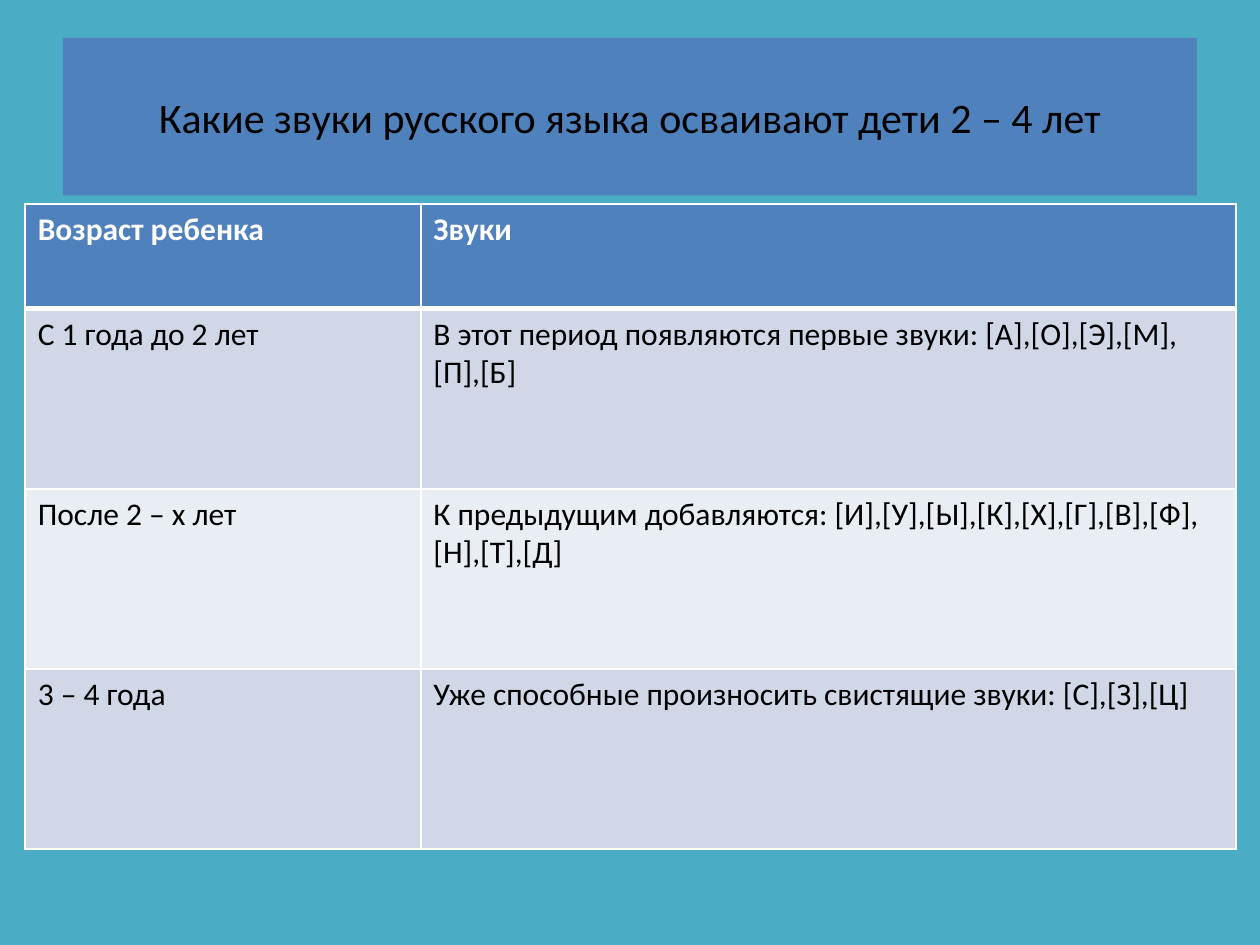
"""Build a slide with a table of the sounds children master by age."""
from lxml import etree
from pptx import Presentation
from pptx import util as u
from pptx.dml.color import RGBColor
from pptx.enum import shapes, text
from pptx.oxml.ns import qn

COLOURS = {
    "background": "4BACC6",
    "header": "4F81BD",
    "odd": "D0D8E8",
    "even": "E9EDF4",
    "border": "FFFFFF",
    "header_text": "FFFFFF",
    "text": "000000",
}
ROWS = [
    ("Возраст ребенка", "Звуки"),
    ("С 1 года до 2 лет", "В этот период появляются первые звуки: [А],[О],[Э],[М],[П],[Б]"),
    ("После 2 – х лет", "К предыдущим добавляются: [И],[У],[Ы],[К],[Х],[Г],[В],[Ф],[Н],[Т],[Д]"),
    ("3 – 4 года", "Уже способные произносить свистящие звуки: [C],[З],[Ц]"),
]
COLUMN_WIDTHS = [3.14, 6.47]
ROW_HEIGHTS = [0.83, 1.43, 1.43, 1.43]


def write(frame, words, size, colour, bold=False):
    frame.text = words
    font = frame.paragraphs[0].runs[0].font
    font.name = "Calibri"
    font.size = u.Pt(size)
    font.bold = bold
    font.color.rgb = RGBColor.from_string(COLOURS[colour])


def add_border(cell, side, points):
    line = etree.SubElement(cell._tc.get_or_add_tcPr(), qn(f"a:ln{side}"), w=str(u.Pt(points)))
    fill = etree.SubElement(line, qn("a:solidFill"))
    etree.SubElement(fill, qn("a:srgbClr"), val=COLOURS["border"])


deck = Presentation()
deck.slide_width, deck.slide_height = u.Inches(10), u.Inches(7.5)
page = deck.slides.add_slide(deck.slide_layouts[6])
page.background.fill.solid()
page.background.fill.fore_color.rgb = RGBColor.from_string(COLOURS["background"])

title = page.shapes.add_shape(
    shapes.MSO_SHAPE.RECTANGLE, u.Inches(0.5), u.Inches(0.3), u.Inches(9), u.Inches(1.25)
)
title.shadow.inherit = False
title.fill.solid()
title.fill.fore_color.rgb = RGBColor.from_string(COLOURS["header"])
title.line.fill.background()
write(title.text_frame, "Какие звуки русского языка осваивают дети 2 – 4 лет", 24, "text")
title.text_frame.vertical_anchor = text.MSO_ANCHOR.MIDDLE
title.text_frame.paragraphs[0].alignment = text.PP_ALIGN.CENTER

table = page.shapes.add_table(
    len(ROWS), len(COLUMN_WIDTHS), u.Inches(0.2), u.Inches(1.62),
    u.Inches(sum(COLUMN_WIDTHS)), u.Inches(sum(ROW_HEIGHTS)),
).table
for column, width in zip(table.columns, COLUMN_WIDTHS):
    column.width = u.Inches(width)
for row, height in zip(table.rows, ROW_HEIGHTS):
    row.height = u.Inches(height)

for r, row_words in enumerate(ROWS):
    is_header = r == 0
    band = "header" if is_header else "odd" if r % 2 else "even"
    for c, words in enumerate(row_words):
        cell = table.cell(r, c)
        write(cell.text_frame, words, 18, "header_text" if is_header else "text", is_header)
        borders = {"L": 1, "R": 1, "T": 3 if r == 1 else 1, "B": 3 if is_header else 1}
        for side, points in borders.items():
            add_border(cell, side, points)
        cell.fill.solid()
        cell.fill.fore_color.rgb = RGBColor.from_string(COLOURS[band])

deck.save("out.pptx")
